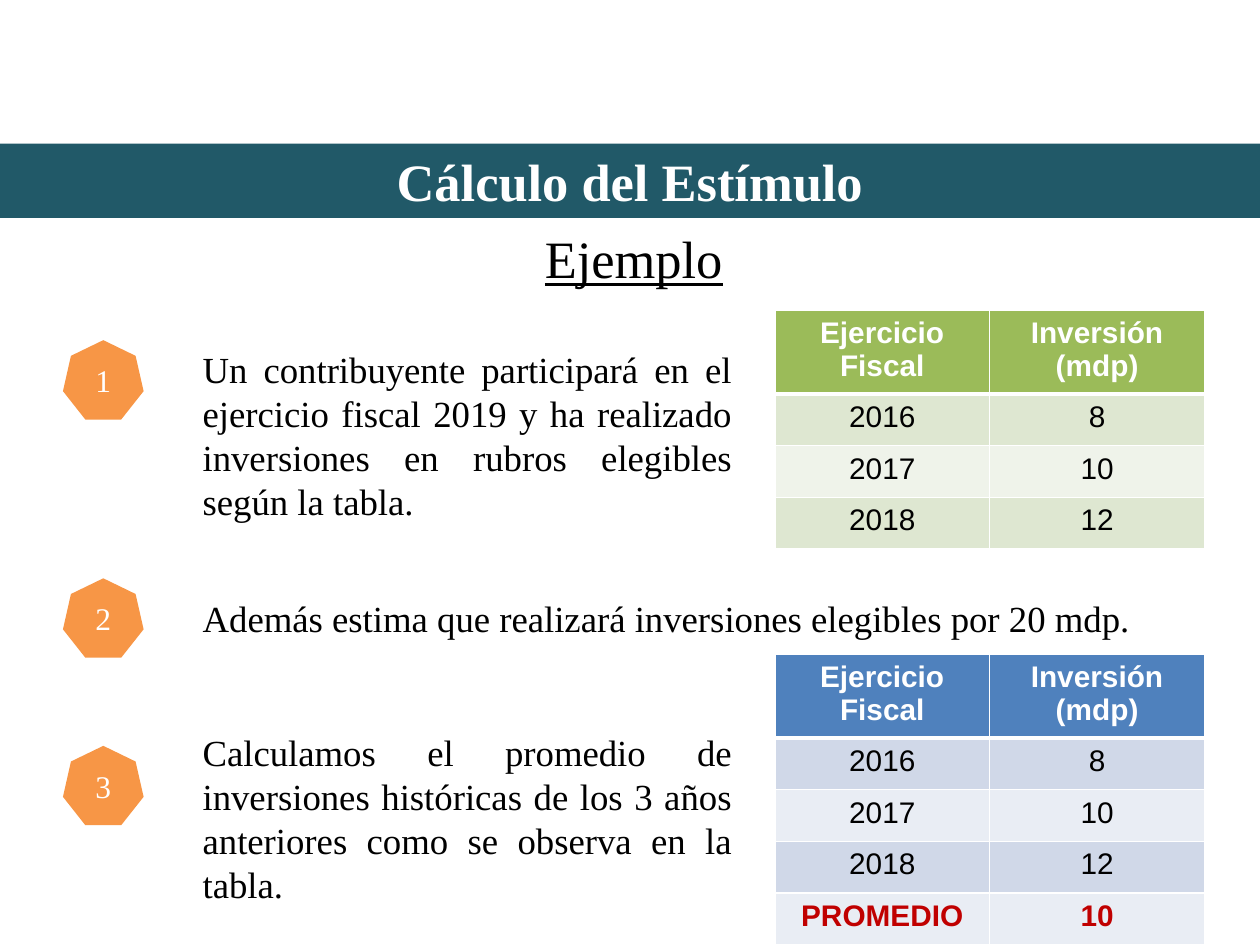
from pptx import Presentation
from pptx.dml.color import RGBColor
from pptx.enum.shapes import MSO_SHAPE as Shape
from pptx.enum.text import MSO_ANCHOR as Anchor, PP_ALIGN as Align
from pptx.oxml import parse_xml
from pptx.oxml.ns import nsdecls
from pptx.util import Inches, Pt

COLORS = {
    "white": "FFFFFF", "black": "000000", "red": "C00000",
    "orange": "F79646", "teal": "215968",
    "green": "9BBB59", "green_mid": "DEE7D1", "green_pale": "EFF3EA",
    "blue": "4F81BD", "blue_mid": "D0D8E8", "blue_pale": "E9EDF4",
}
SERIF, SANS = "Times New Roman", "Arial"
WIDTH, HEIGHT = Inches(10), Inches(7.5)

# Columns and row heights, in percent of the slide's width and height
BADGE_X, TEXT_X, TABLE_X = 5, 15.1, 61.5
BADGE_W, TEXT_W, TABLE_W = 6.4, 44, 34.1
BADGE_H, HEAD_H, ROW_H = 8.4, 8.53, 5.47

HEADERS = ("Ejercicio Fiscal", "Inversión (mdp)")
HISTORY = [("2016", "8"), ("2017", "10"), ("2018", "12")]
AVERAGE = ("PROMEDIO", "10")


def rgb(name):
    return RGBColor.from_string(COLORS[name])


def px(share):
    return round(WIDTH * share / 100)


def py(share):
    return round(HEIGHT * share / 100)


def box(x, y, w, h):
    """Left, top, width and height from percentages of the slide."""
    return px(x), py(y), px(w), py(h)


def write(tf, text, size=21, font=SERIF, color="black", bold=False,
          underline=False, align=Align.CENTER, anchor=Anchor.MIDDLE):
    tf.word_wrap = True
    tf.vertical_anchor = anchor
    p = tf.paragraphs[0]
    p.alignment = align
    r = p.add_run()
    r.text = text
    f = r.font
    f.size, f.name, f.bold, f.underline = Pt(size), font, bold, underline
    f.color.rgb = rgb(color)


def add_title(s, text):
    sp = s.shapes.title
    sp.left, sp.top, sp.width, sp.height = box(5, 22, 90.6, 10.53)
    write(sp.text_frame, text, size=30, underline=True)


def add_filled(s, kind, place, fill, text, **fmt):
    sp = s.shapes.add_shape(kind, *place)
    sp.shadow.inherit = False
    sp.fill.solid()
    sp.fill.fore_color.rgb = rgb(fill)
    sp.line.fill.background()
    write(sp.text_frame, text, color="white", **fmt)


def add_badge(s, y, number):
    add_filled(s, Shape.HEPTAGON, box(BADGE_X, y, BADGE_W, BADGE_H),
               "orange", str(number), size=18)


def add_body(s, y, w, h, text, anchor):
    sp = s.shapes.add_textbox(*box(TEXT_X, y, w, h))
    write(sp.text_frame, text, align=Align.JUSTIFY, anchor=anchor)


def set_borders(cell, top, bottom):
    """White cell edges; top and bottom are widths in points."""
    tc_pr = cell._tc.get_or_add_tcPr()
    for side, width in (("L", 1), ("R", 1), ("T", top), ("B", bottom)):
        tc_pr.append(parse_xml(
            f'<a:ln{side} {nsdecls("a")} w="{Pt(width)}"><a:solidFill>'
            f'<a:srgbClr val="{COLORS["white"]}"/></a:solidFill></a:ln{side}>'))


def add_investments(s, y, hue, rows):
    """Table with a header in the hue and bands in its lighter tints."""
    height = HEAD_H + ROW_H * len(rows)
    table = s.shapes.add_table(len(rows) + 1, len(HEADERS),
                               *box(TABLE_X, y, TABLE_W, height)).table
    for i, values in enumerate([HEADERS, *rows]):
        head, total = i == 0, values == AVERAGE
        table.rows[i].height = py(HEAD_H if head else ROW_H)
        fill = hue if head else hue + ("_mid" if i % 2 else "_pale")
        color = "white" if head else "red" if total else "black"
        for j, value in enumerate(values):
            cell = table.cell(i, j)
            set_borders(cell, top=3 if i == 1 else 1, bottom=3 if head else 1)
            cell.fill.solid()
            cell.fill.fore_color.rgb = rgb(fill)
            write(cell.text_frame, value, size=17, font=SANS, color=color,
                  bold=head or total, anchor=None)


def main():
    prs = Presentation()
    prs.slide_width, prs.slide_height = WIDTH, HEIGHT
    s = prs.slides.add_slide(prs.slide_layouts[5])

    add_title(s, "Ejemplo")
    add_filled(s, Shape.RECTANGLE, box(0, 15.2, 100, 7.87), "teal",
               "Cálculo del Estímulo", size=30, bold=True)

    add_body(s, 36, TEXT_W, 20.93,
             "Un contribuyente participará en el ejercicio fiscal 2019 y ha "
             "realizado inversiones en rubros elegibles según la tabla.",
             Anchor.TOP)
    add_body(s, 61.2, 83.9, BADGE_H,
             "Además estima que realizará inversiones elegibles por 20 mdp.",
             Anchor.MIDDLE)
    add_body(s, 76.53, TEXT_W, 19.87,
             "Calculamos el promedio de inversiones históricas de los 3 años "
             "anteriores como se observa en la tabla.",
             Anchor.TOP)
    for number, y in enumerate((36, 61.2, 78.93), start=1):
        add_badge(s, y, number)

    add_investments(s, 32.8, "green", HISTORY)
    add_investments(s, 69.2, "blue", [*HISTORY, AVERAGE])

    prs.save("out.pptx")


if __name__ == "__main__":
    main()
